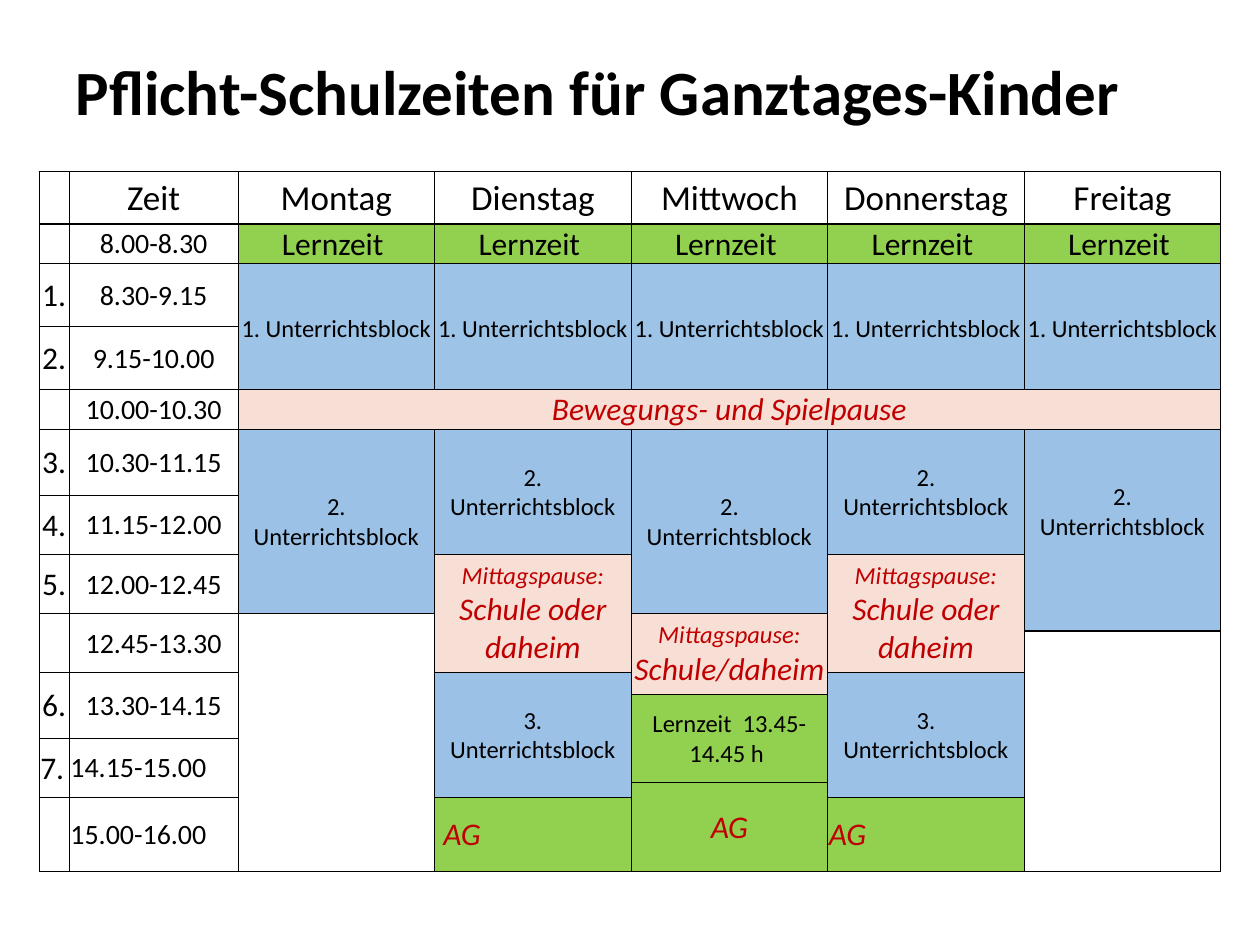
from lxml.etree import SubElement
from pptx import Presentation
from pptx.dml.color import RGBColor
from pptx.enum.text import MSO_ANCHOR as Anchor, PP_ALIGN as Align
from pptx.oxml.ns import qn
from pptx.util import Inches, Pt

FONT = "Calibri"
BLACK, RED, WHITE = "000000", "C00000", "FFFFFF"
GREEN, BLUE, LIGHT_BLUE, PINK = "92D050", "9DC3E6", "9BC2E6", "F7DFD5"

HEADING = "Pflicht-Schulzeiten für Ganztages-Kinder"
HEADERS = ["", "Zeit", "Montag", "Dienstag", "Mittwoch", "Donnerstag", "Freitag"]
MO, DI, MI, DO, FR = DAYS = range(2, 7)

COLUMN_WIDTHS = [0.24, 1.34] + [1.56] * len(DAYS)
ROW_HEIGHTS = [0.42, 0.31, 0.5, 0.5, 0.32, 0.52, 0.47, 0.47,
               0.14, 0.33, 0.17, 0.35, 0.35, 0.12, 0.59]
HEAVY_TOPS = {(row, col) for row in (1, 5) for col in range(7)} | {(9, FR)}

# first row, rows, number, time
PERIODS = [
    (1, 1, "", "8.00-8.30"),
    (2, 1, "1.", "8.30-9.15"),
    (3, 1, "2.", "9.15-10.00"),
    (4, 1, "", "10.00-10.30"),
    (5, 1, "3.", "10.30-11.15"),
    (6, 1, "4.", "11.15-12.00"),
    (7, 1, "5.", "12.00-12.45"),
    (8, 2, "", "12.45-13.30"),
    (10, 2, "6.", "13.30-14.15"),
    (12, 2, "7.", "14.15-15.00"),
    (14, 1, "", "15.00-16.00"),
]
LEFT_ALIGNED = {(12, 0), (12, 1), (14, 1), (14, DI), (14, DO)}

LESSON_2 = [("2.", 14), ("Unterrichtsblock", 14)]
LESSON_3 = [("3.", 14), ("Unterrichtsblock", 14)]
LUNCH = [("Mittagspause:", 14), ("Schule oder daheim", 18)]
SHORT_LUNCH = [("Mittagspause:", 14), ("Schule/daheim", 18)]
CLUB = [("AG", 18)]

# first row, column, rows, columns, fill, text colour, lines
BLOCKS = [(4, MO, 1, 5, PINK, RED, [("Bewegungs- und Spielpause", 18)])]
for day in DAYS:
    BLOCKS += [
        (1, day, 1, 1, GREEN, BLACK, [("Lernzeit ", 18)]),
        (2, day, 2, 1, BLUE, BLACK, [("1. Unterrichtsblock", 14, " ", 18)]),
    ]
for day in (DI, DO):
    BLOCKS += [
        (5, day, 2, 1, LIGHT_BLUE, BLACK, LESSON_2),
        (7, day, 3, 1, PINK, RED, LUNCH),
        (10, day, 4, 1, LIGHT_BLUE, BLACK, LESSON_3),
        (14, day, 1, 1, GREEN, RED, CLUB),
    ]
BLOCKS += [
    (5, MO, 3, 1, LIGHT_BLUE, BLACK, LESSON_2),
    (8, MO, 7, 1, WHITE, BLACK, []),
    (5, MI, 3, 1, LIGHT_BLUE, BLACK, LESSON_2),
    (8, MI, 3, 1, PINK, RED, SHORT_LUNCH),
    (11, MI, 2, 1, GREEN, BLACK, [("Lernzeit  13.45-14.45 h ", 14)]),
    (13, MI, 2, 1, GREEN, RED, CLUB),
    (5, FR, 4, 1, LIGHT_BLUE, BLACK, LESSON_2),
    (9, FR, 6, 1, WHITE, BLACK, []),
]
EXTRA_LEFT = {(14, DI): 0.07}
EXTRA_BOTTOM = {(5, FR): 0.3}


def color(value):
    return RGBColor.from_string(value)


def style_font(font, size, value, bold=False, italic=False):
    font.name, font.size = FONT, Pt(size)
    font.bold, font.italic = bold, italic
    font.color.rgb = color(value)


def add_borders(cell, heavy_top, heavy_bottom):
    widths = {"L": 0.5, "R": 0.5, "T": 1 if heavy_top else 0.5,
              "B": 1 if heavy_bottom else 0.5}
    properties = cell._tc.get_or_add_tcPr()
    for side, width in widths.items():
        line = SubElement(properties, qn(f"a:ln{side}"), w=str(Pt(width)))
        SubElement(SubElement(line, qn("a:solidFill")), qn("a:srgbClr"), val=BLACK)


def fill_cell(table, row, col, rows, cols, fill, text_color, lines):
    cell = table.cell(row, col)
    if rows * cols > 1:
        cell.merge(table.cell(row + rows - 1, col + cols - 1))
    add_borders(cell, (row, col) in HEAVY_TOPS, (row + rows, col) in HEAVY_TOPS)
    cell.fill.solid()
    cell.fill.fore_color.rgb = color(fill)
    cell.vertical_anchor = Anchor.MIDDLE
    cell.margin_left = Inches(EXTRA_LEFT.get((row, col), 0.01))
    cell.margin_top = cell.margin_right = Inches(0.01)
    cell.margin_bottom = Inches(EXTRA_BOTTOM.get((row, col), 0))
    frame = cell.text_frame
    for index, line in enumerate(lines or [("", 12)]):
        paragraph = frame.add_paragraph() if index else frame.paragraphs[0]
        paragraph.alignment = Align.LEFT if (row, col) in LEFT_ALIGNED else Align.CENTER
        style_font(paragraph.font, line[1], text_color, italic=text_color == RED)
        for text, size in zip(line[::2], line[1::2]):
            if text:
                run = paragraph.add_run()
                run.text = text
                run.font.size = Pt(size)


def add_heading(slide):
    box = slide.shapes.add_textbox(Inches(0.5), Inches(0.13), Inches(9), Inches(1.25))
    frame = box.text_frame
    frame.word_wrap = True
    frame.vertical_anchor = Anchor.MIDDLE
    paragraph = frame.paragraphs[0]
    paragraph.text = HEADING
    paragraph.line_spacing = 0.9
    style_font(paragraph.font, 36, BLACK, bold=True)


def add_timetable(slide):
    table = slide.shapes.add_table(
        len(ROW_HEIGHTS), len(COLUMN_WIDTHS), Inches(0.31), Inches(1.36),
        Inches(sum(COLUMN_WIDTHS)), Inches(sum(ROW_HEIGHTS))).table
    table.first_row = table.horz_banding = False
    for column, width in zip(table.columns, COLUMN_WIDTHS):
        column.width = Inches(width)
    for row, height in zip(table.rows, ROW_HEIGHTS):
        row.height = Inches(height)
    for col, header in enumerate(HEADERS):
        fill_cell(table, 0, col, 1, 1, WHITE, BLACK, [(header, 20)])
    for row, rows, number, time in PERIODS:
        fill_cell(table, row, 0, rows, 1, WHITE, BLACK, [(number, 18)])
        fill_cell(table, row, 1, rows, 1, WHITE, BLACK, [(time, 16)])
    for block in BLOCKS:
        fill_cell(table, *block)


def main():
    deck = Presentation()
    deck.slide_width, deck.slide_height = Inches(10), Inches(7.5)
    slide = deck.slides.add_slide(deck.slide_layouts[6])
    add_heading(slide)
    add_timetable(slide)
    deck.save("out.pptx")


if __name__ == "__main__":
    main()
